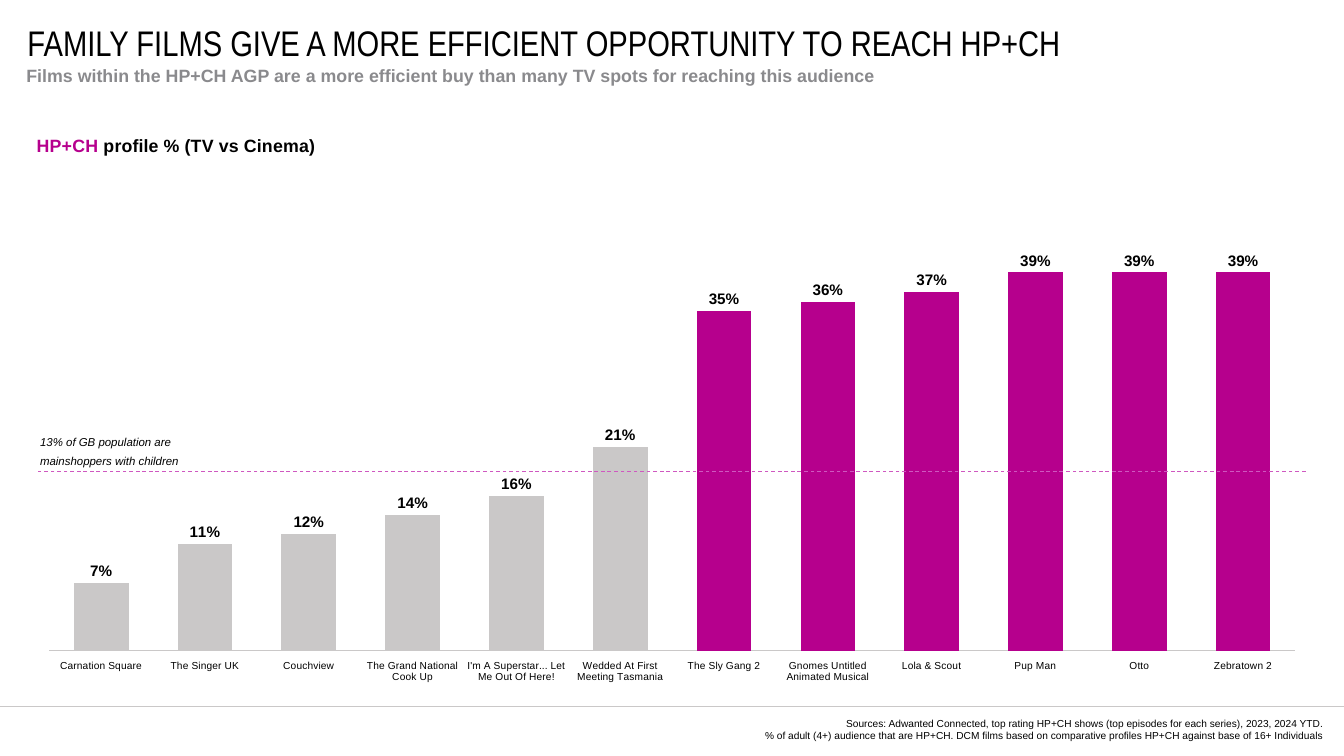
import pptx
import pptx.util
import pptx.chart.data
import pptx.dml.color
import pptx.enum.chart
import pptx.enum.dml
import pptx.enum.shapes
import pptx.enum.text
import pptx.oxml
import pptx.oxml.ns
from dataclasses import dataclass

Inches = pptx.util.Inches
Pt = pptx.util.Pt


@dataclass(frozen=True)
class Theme:
    """Hold the colours, fonts and type sizes."""
    ink: str = "000000"
    muted: str = "8A8A8D"
    film: str = "B6008D"
    show: str = "CAC8C8"
    mark: str = "CF58C0"
    body: str = "Arial"
    narrow: str = "Arial Narrow"
    title: int = 28
    head: int = 14
    label: int = 12
    note: int = 9
    small: int = 8


THEME = Theme()
FILMS = [("Zebratown 2", 0.39), ("Otto", 0.39), ("Pup Man", 0.39), ("Lola & Scout", 0.37),
         ("Gnomes Untitled Animated Musical", 0.36), ("The Sly Gang 2", 0.35)]
SHOWS = [("Wedded At First Meeting Tasmania", 0.21), ("I'm A Superstar... Let Me Out Of Here!", 0.16),
         ("The Grand National Cook Up", 0.14), ("Couchview", 0.12), ("The Singer UK", 0.11),
         ("Carnation Square", 0.07)]


def rgb(code):
    """Turn a hex code into a colour."""
    return pptx.dml.color.RGBColor.from_string(code)


def style(font, size, color=THEME.ink, face=THEME.body, bold=False, italic=False):
    """Set the look of a font."""
    font.size, font.name, font.bold, font.italic = Pt(size), face, bold, italic
    font.color.rgb = rgb(color)


def add_text(slide, box, text, size, align=None, lead=None, **look):
    """Add a wrapped text box, one paragraph per line."""
    frame = slide.shapes.add_textbox(*map(Inches, box)).text_frame
    frame.word_wrap = True
    frame.text = text
    for para in frame.paragraphs:
        para.alignment = align
        para.line_spacing = lead
        for run in para.runs:
            style(run.font, size, **look)


def add_line(slide, start, end, color, width, dash=None):
    """Draw a straight line without a shadow."""
    line = slide.shapes.add_connector(pptx.enum.shapes.MSO_CONNECTOR.STRAIGHT,
                                      *map(Inches, start + end))
    line.line.color.rgb = rgb(color)
    line.line.width = Pt(width)
    line.line.dash_style = dash
    props = line._element.spPr
    props.append(props.makeelement(pptx.oxml.ns.qn("a:effectLst"), {}))


def place(node, spot, inner=False):
    """Give a chart title or plot area a fixed layout."""
    qn = pptx.oxml.ns.qn
    for old in node.findall(qn("c:layout")):
        node.remove(old)
    layout = node.makeelement(qn("c:layout"), {})
    manual = layout.makeelement(qn("c:manualLayout"), {})
    layout.append(manual)
    rules = [("layoutTarget", "inner")] if inner else []
    rules += [("xMode", "edge"), ("yMode", "edge")]
    rules += list(zip("xywh", map(str, spot)))
    for tag, val in rules:
        manual.append(manual.makeelement(qn("c:" + tag), {"val": val}))
    text = node.find(qn("c:tx"))
    node.insert(0 if text is None else 1, layout)


def add_header(slide, box):
    """Place the title and the line under it."""
    left, top, width, height = box
    title = slide.shapes.title
    title.left, title.top, title.width, title.height = map(Inches, (left, top, width, 0.32))
    frame = title.text_frame
    frame.text = "FAMILY FILMS GIVE A MORE EFFICIENT OPPORTUNITY TO REACH HP+CH"
    frame.margin_left = frame.margin_right = frame.margin_top = frame.margin_bottom = 0
    frame.word_wrap = False
    frame.auto_size = pptx.enum.text.MSO_AUTO_SIZE.NONE
    frame.vertical_anchor = pptx.enum.text.MSO_ANCHOR.MIDDLE
    para = frame.paragraphs[0]
    para.alignment = pptx.enum.text.PP_ALIGN.LEFT
    style(para.runs[0].font, THEME.title, face=THEME.narrow)
    add_text(slide, (left - 0.11, top + 0.38, width - 0.82, height - 0.38),
             "Films within the HP+CH AGP are a more efficient buy than many TV spots "
             "for reaching this audience", THEME.head, lead=Pt(15), color=THEME.muted, bold=True)


def add_bars(slide, box):
    """Place the profile chart with its share line."""
    left, top, width, height = box
    data = pptx.chart.data.CategoryChartData(number_format="0%")
    names, shares = zip(*FILMS + SHOWS)
    data.categories = names
    data.add_series("Series 1", shares)
    chart = slide.shapes.add_chart(pptx.enum.chart.XL_CHART_TYPE.COLUMN_CLUSTERED,
                                   *map(Inches, box), data).chart
    chart.has_legend = False
    style(chart.font, 10)

    para = chart.chart_title.text_frame.paragraphs[0]
    for text, color in (("HP+CH", THEME.film), (" profile % (TV vs Cinema)", THEME.ink)):
        run = para.add_run()
        run.text = text
        style(run.font, THEME.head, color, bold=True)
    chart.chart_title.include_in_layout = False
    place(chart.chart_title._element, (0.005, 0.024))
    place(chart._chartSpace.chart.plotArea, (0.017, 0.082, 0.967, 0.815), inner=True)

    axis = chart.category_axis
    axis.reverse_order = True
    axis.major_tick_mark = pptx.enum.chart.XL_TICK_MARK.NONE
    axis.tick_label_position = pptx.enum.chart.XL_TICK_LABEL_POSITION.LOW
    axis.format.line.color.rgb = rgb(THEME.show)
    axis.format.line.width = Pt(0.75)
    style(axis.tick_labels.font, THEME.small)
    scale = chart.value_axis
    scale.minimum_scale, scale.maximum_scale = 0, 0.5
    scale.has_major_gridlines = False
    scale.visible = False

    plot = chart.plots[0]
    plot.gap_width, plot.overlap = 90, -19
    plot.vary_by_categories = False
    plot.has_data_labels = True
    labels = plot.data_labels
    labels.show_value = True
    labels.number_format, labels.number_format_is_linked = "0%", False
    labels.position = pptx.enum.chart.XL_LABEL_POSITION.OUTSIDE_END
    style(labels.font, THEME.label, bold=True)
    bars = plot.series[0]
    bars.format.fill.solid()
    bars.format.fill.fore_color.rgb = rgb(THEME.film)
    for spot in range(len(FILMS), len(names)):
        fill = bars.points[spot].format.fill
        fill.solid()
        fill.fore_color.rgb = rgb(THEME.show)

    level = top + 3.88
    add_line(slide, (left + width - 0.11, level), (left + 0.12, level), THEME.mark, 0.75,
             pptx.enum.dml.MSO_LINE.DASH)
    add_text(slide, (left + 0.04, level - 0.51, 2.52, 0.37),
             "13% of GB population are\nmainshoppers with children",
             THEME.note, lead=Pt(15), italic=True)


def add_footer(slide, box):
    """Place the rule and the sources."""
    left, top, width, height = box
    add_line(slide, (left, top), (left + width, top), THEME.show, 0.5)
    add_text(slide, (left + width - 8.72, top + 0.07, 8.6, height - 0.17),
             "Sources: Adwanted Connected, top rating HP+CH shows (top episodes for each series), "
             "2023, 2024 YTD.\n% of adult (4+) audience that are HP+CH. DCM films based on "
             "comparative profiles HP+CH against base of 16+ Individuals",
             THEME.small, align=pptx.enum.text.PP_ALIGN.RIGHT)


def main():
    """Build and save the slide."""
    deck = pptx.Presentation()
    deck.slide_width, deck.slide_height = Inches(14.7), Inches(8.27)
    slide = deck.slides.add_slide(deck.slide_layouts[5])
    add_footer(slide, (0, 7.73, 14.7, 0.54))
    add_header(slide, (0.3, 0.3, 13.58, 0.86))
    add_bars(slide, (0.3, 1.28, 14.09, 6.51))
    deck.save("out.pptx")


if __name__ == "__main__":
    main()
